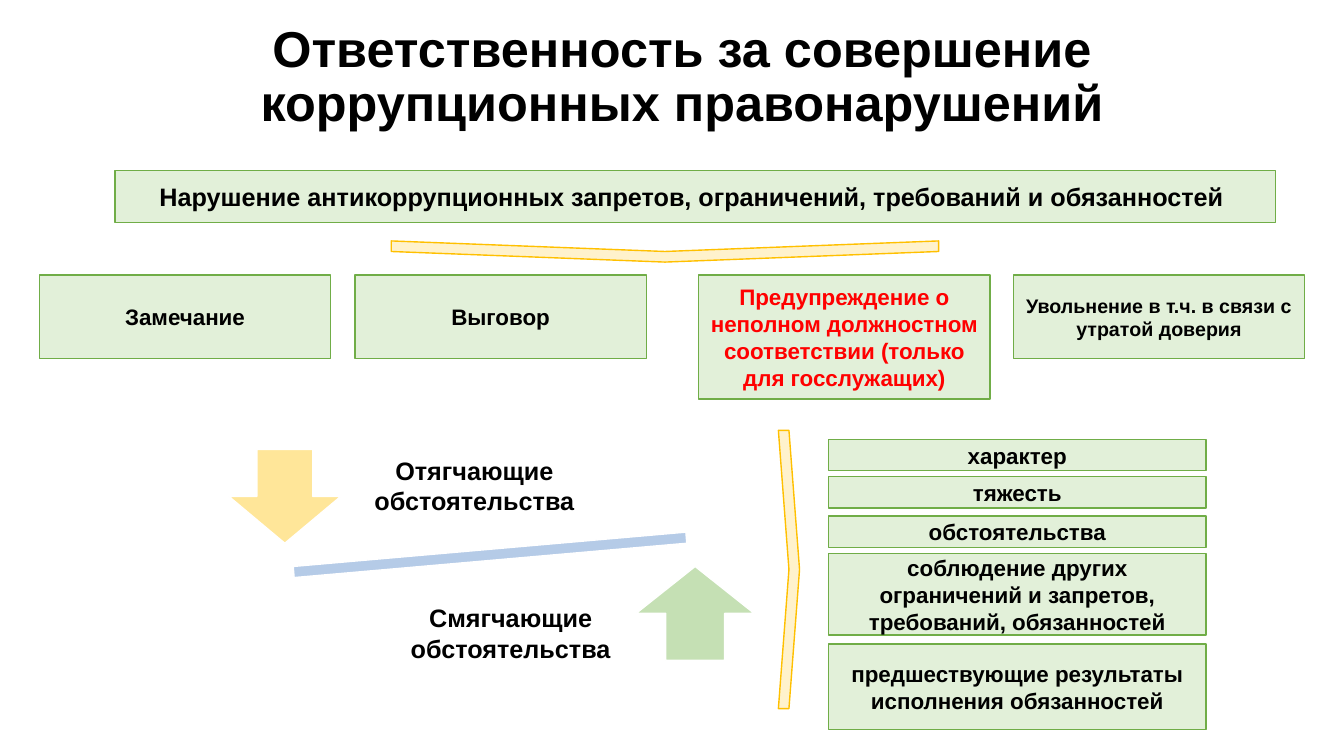
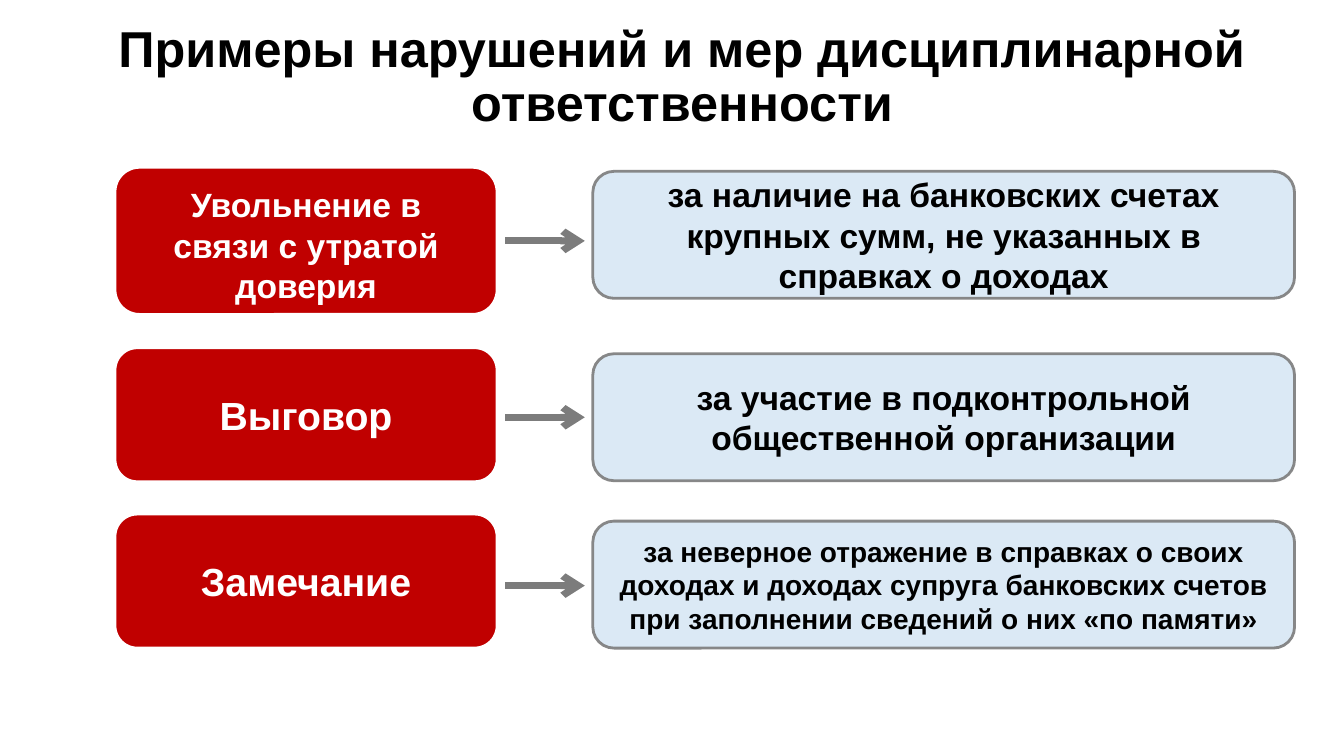
from lxml import etree
from pptx import Presentation
from pptx import util as u
from pptx.dml.color import RGBColor
from pptx.enum import shapes, text
from pptx.oxml import ns

COLORS = {
    "text": "000000", "white": "FFFFFF", "alert": "FF0000",
    "green_fill": "E2F0D9", "green_line": "70AD47",
    "gold_fill": "FFF2CC", "gold_line": "FFC000",
    "beam": "B5CBE7", "down": "FFE699", "up": "C5E0B4",
    "measure": "C00000", "reason": "BDD7EE", "grey": "7C7C7C",
}
SHAPE = shapes.MSO_SHAPE
ANCHOR = text.MSO_ANCHOR


def inches(*lengths):
    return [u.Inches(length) for length in lengths]


def apply(target, values):
    for name, value in values.items():
        setattr(target, name, value)


def add_xml(parent, tag, **attributes):
    return etree.SubElement(parent, ns.qn(tag), attributes)


def set_alpha(fill, percent):
    """Make the solid fill of a shape or line partly transparent."""
    color = fill._xPr.find(ns.qn("a:solidFill"))[0]
    add_xml(color, "a:alpha", val=str(percent * 1000))


class Deck:
    FONT = {"name": "Arial", "bold": True}
    FRAME = {"word_wrap": True}

    def __init__(self):
        self.prs = Presentation()
        apply(self.prs, {"slide_width": u.Inches(13.33), "slide_height": u.Inches(7.5)})
        self.slide = None

    def new_slide(self, title):
        self.slide = self.prs.slides.add_slide(self.prs.slide_layouts[6])
        self.label((0.57, 0.28, 12.39, 0.99), title, 36, anchor=ANCHOR.MIDDLE, spacing=0.9)

    def put_text(self, shape, words, size, color, anchor, spacing=1.0):
        apply(shape.text_frame, {**self.FRAME, "vertical_anchor": anchor})
        paragraph = shape.text_frame.paragraphs[0]
        apply(paragraph, {"alignment": text.PP_ALIGN.CENTER, "line_spacing": spacing})
        run = paragraph.add_run()
        run.text = words
        apply(run.font, {**self.FONT, "size": u.Pt(size)})
        run.font.color.rgb = RGBColor.from_string(COLORS[color])

    def label(self, place, words, size, color="text", anchor=ANCHOR.TOP, spacing=1.0):
        box = self.slide.shapes.add_textbox(*inches(*place))
        self.put_text(box, words, size, color, anchor, spacing)

    def figure(self, kind, place, fill, line="white", width=1, rotation=0):
        shape = self.slide.shapes.add_shape(kind, *inches(*place))
        shape.shadow.inherit = False
        shape.rotation = rotation
        for part, color in ((shape.fill, fill), (shape.line.fill, line)):
            part.solid()
            part.fore_color.rgb = RGBColor.from_string(COLORS[color])
        shape.line.width = u.Pt(width)
        return shape

    def chevron(self, place, rotation=0):
        self.figure(SHAPE.CHEVRON, place, "gold_fill", "gold_line", rotation=rotation)

    def green_box(self, place, words, size=16, color="text"):
        box = self.figure(SHAPE.RECTANGLE, place, "green_fill", "green_line")
        self.put_text(box, words, size, color, ANCHOR.MIDDLE)

    def measure(self, top, height):
        return self.figure(SHAPE.ROUNDED_RECTANGLE, (1.14, top, 3.79, height),
                           "measure", width=2)

    def reason(self, top, words, size):
        box = self.figure(SHAPE.ROUNDED_RECTANGLE, (5.88, top, 6.96, 1.26),
                          "reason", "grey", 2)
        set_alpha(box.fill, 54)
        set_alpha(box.line.fill, 90)
        self.put_text(box, words, size, "text", ANCHOR.MIDDLE)

    def arrow(self, y):
        arrow = self.slide.shapes.add_connector(
            shapes.MSO_CONNECTOR.STRAIGHT, *inches(5.01, y, 5.8, y))
        arrow.line.width = u.Pt(5)
        arrow.line.color.rgb = RGBColor.from_string(COLORS["grey"])
        add_xml(arrow.line._get_or_add_ln(), "a:tailEnd", type="arrow")
        add_xml(arrow._element.spPr, "a:effectLst")


def liability_slide(deck):
    deck.new_slide("Ответственность за совершение коррупционных правонарушений")
    deck.green_box(
        (1.14, 1.69, 11.51, 0.52),
        "Нарушение антикоррупционных запретов, ограничений, требований и обязанностей ", 18)
    deck.chevron((6.49, -0.22, 0.21, 5.43), rotation=90)

    penalties = (
        (0.39, 0.83, "Замечание", 16, "text"),
        (3.52, 0.83, "Выговор", 16, "text"),
        (6.93, 1.23, "Предупреждение о неполном должностном соответствии "
                     "(только для госслужащих)", 16, "alert"),
        (10.05, 0.83, "Увольнение в т.ч. в связи с утратой доверия", 14, "text"),
    )
    for left, height, words, size, color in penalties:
        deck.green_box((left, 2.73, 2.89, height), words, size, color)

    deck.figure(SHAPE.MATH_MINUS, (2.2, 5.27, 5.32, 0.47), "beam", rotation=355)
    deck.figure(SHAPE.DOWN_ARROW, (2.27, 4.46, 1.11, 0.93), "down")
    deck.figure(SHAPE.UP_ARROW, (6.31, 5.62, 1.17, 0.93), "up")
    deck.label((3.53, 4.47, 2.35, 0.71), "Отягчающие обстоятельства", 18)
    deck.label((3.88, 5.93, 2.37, 0.71), "Смягчающие обстоятельства", 18)

    deck.chevron((7.72, 4.27, 0.21, 2.76))
    criteria = (
        (4.36, 0.31, "характер"),
        (4.73, 0.31, "тяжесть"),
        (5.12, 0.31, "обстоятельства"),
        (5.49, 0.81, "соблюдение других ограничений и запретов, требований, обязанностей"),
        (6.39, 0.85, "предшествующие результаты исполнения обязанностей"),
    )
    for top, height, words in criteria:
        deck.green_box((8.22, top, 3.74, height), words)


def examples_slide(deck):
    deck.new_slide("Примеры нарушений и мер дисциплинарной ответственности")
    deck.measure(1.66, 1.46)
    deck.label((1.34, 1.78, 3.39, 1.31), "Увольнение в связи с утратой доверия", 24, "white")
    for top, words in ((3.45, "Выговор"), (5.1, "Замечание")):
        deck.put_text(deck.measure(top, 1.33), words, 28, "white", ANCHOR.MIDDLE)

    reasons = (
        (1.7, 2.39, 24, "за наличие на банковских счетах крупных сумм, "
                        "не указанных в справках о доходах"),
        (3.51, 4.14, 24, "за участие в подконтрольной общественной организации"),
        (5.17, 5.81, 20, "за неверное отражение в справках о своих доходах и доходах супруга "
                         "банковских счетов при заполнении сведений о них «по памяти»"),
    )
    for top, arrow_y, size, words in reasons:
        deck.reason(top, words, size)
        deck.arrow(arrow_y)


def main():
    deck = Deck()
    liability_slide(deck)
    examples_slide(deck)
    deck.prs.save("out.pptx")


if __name__ == "__main__":
    main()
